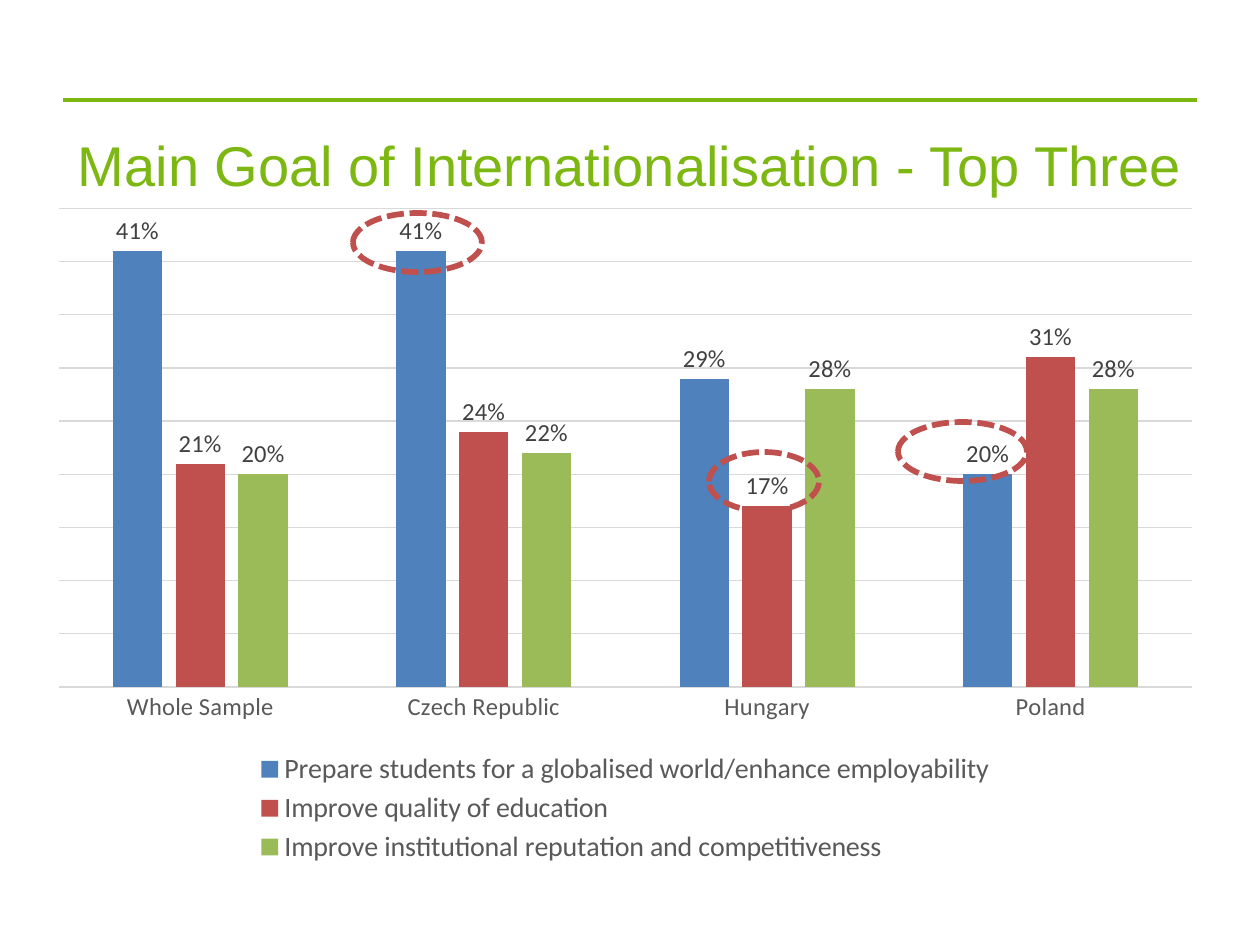
from lxml import etree
from pptx import Presentation
from pptx.chart.data import CategoryChartData
from pptx.dml.color import RGBColor
from pptx.enum.chart import XL_CHART_TYPE as ChartType, XL_LABEL_POSITION as LabelPos
from pptx.enum.chart import XL_LEGEND_POSITION as LegendPos, XL_TICK_MARK as Tick
from pptx.enum.dml import MSO_LINE_DASH_STYLE as Dash
from pptx.enum.shapes import MSO_CONNECTOR as Connector, MSO_SHAPE as Shape
from pptx.enum.text import MSO_ANCHOR as Anchor, MSO_AUTO_SIZE as AutoSize, PP_ALIGN as Align
from pptx.oxml import parse_xml
from pptx.oxml.ns import nsdecls, qn
from pptx.util import Pt

EMU_PER_PX = 914400 / 126
REGIONS = ["Whole Sample", "Czech Republic", "Hungary", "Poland"]
GOALS = [
    ("Prepare students for a globalised world/enhance employability",
     (0.41, 0.41, 0.29, 0.20), "4F81BD"),
    ("Improve quality of education", (0.21, 0.24, 0.17, 0.31), "C0504D"),
    ("Improve institutional reputation and competitiveness",
     (0.20, 0.22, 0.28, 0.28), "9BBB59"),
]
# Left, top and width inside the chart box
HIGHLIGHTS = [(318, 18, 129), (674, 257, 110), (863, 227, 129)]
HIGHLIGHT_HEIGHT = 59


def px(length):
    return round(length * EMU_PER_PX)


def rgb(color):
    return RGBColor.from_string(color)


def style_font(font, size, color, name="Calibri"):
    font.size = Pt(size)
    font.name = name
    font.color.rgb = rgb(color)


def style_line(line, color, width):
    line.color.rgb = rgb(color)
    line.width = Pt(width)


def set_layout(parent, index, x, y, w, h, inner=False):
    """Fix a chart part at fractions of the chart area."""
    for old in parent.findall(qn("c:layout")):
        parent.remove(old)
    layout = parse_xml(f"<c:layout {nsdecls('c')}><c:manualLayout/></c:layout>")
    settings = [("layoutTarget", "inner")] if inner else []
    settings += [("xMode", "edge"), ("yMode", "edge"),
                 ("x", x), ("y", y), ("w", w), ("h", h)]
    for tag, value in settings:
        etree.SubElement(layout[0], qn(f"c:{tag}")).set("val", str(value))
    parent.insert(index, layout)


def add_heading(slide, left, top, width, height):
    # Rule above the title
    rule = slide.shapes.add_connector(
        Connector.STRAIGHT, px(left), px(top), px(left + width), px(top))
    style_line(rule.line, "7EB711", 2.75)
    etree.SubElement(rule._element.spPr, qn("a:effectLst"))

    # Title
    title = slide.shapes.title
    title.left, title.top = px(left), px(top + 16)
    title.width, title.height = px(width), px(height - 16)
    frame = title.text_frame
    frame.text = "Main Goal of Internationalisation - Top Three"
    frame.auto_size = AutoSize.NONE
    frame.vertical_anchor = Anchor.MIDDLE
    frame.paragraphs[0].alignment = Align.CENTER
    style_font(frame.paragraphs[0].runs[0].font, 32, "7DB712", "Arial")


def add_goal_chart(slide, left, top, width, height):
    goal_data = CategoryChartData(number_format="0%")
    goal_data.categories = REGIONS
    for goal, shares, _ in GOALS:
        goal_data.add_series(goal, shares)
    chart = slide.shapes.add_chart(
        ChartType.COLUMN_CLUSTERED, px(left), px(top), px(width), px(height),
        goal_data).chart
    chart.has_title = False
    style_font(chart.font, 10, "000000")

    # Columns and their labels
    plot = chart.plots[0]
    plot.gap_width, plot.overlap = 219, -27
    plot.vary_by_categories = False
    for series, (_, _, color) in zip(plot.series, GOALS):
        series.format.fill.solid()
        series.format.fill.fore_color.rgb = rgb(color)
        labels = series.data_labels
        labels.show_value = True
        labels.number_format, labels.number_format_is_linked = "0%", False
        labels.position = LabelPos.OUTSIDE_END
        style_font(labels.font, 14, "404040")

    # Axes
    regions = chart.category_axis
    regions.major_tick_mark = regions.minor_tick_mark = Tick.NONE
    style_font(regions.tick_labels.font, 14, "595959")
    style_line(regions.format.line, "D9D9D9", 0.75)
    shares = chart.value_axis
    shares.visible = False
    shares.minimum_scale, shares.maximum_scale = 0, 0.45
    shares.major_unit = 0.05
    shares.has_major_gridlines = True
    style_line(shares.major_gridlines.format.line, "D9D9D9", 0.75)
    set_layout(chart._chartSpace.chart.plotArea, 0, 0.02, 0.02, 0.96, 0.71, inner=True)

    # Legend
    chart.has_legend = True
    legend = chart.legend
    legend.position = LegendPos.BOTTOM
    legend.include_in_layout = False
    style_font(legend.font, 16, "595959")
    set_layout(legend._element, 1, 0.19, 0.82, 0.62, 0.18)


def add_highlights(slide, left, top):
    for x, y, width in HIGHLIGHTS:
        ring = slide.shapes.add_shape(
            Shape.OVAL, px(left + x), px(top + y), px(width), px(HIGHLIGHT_HEIGHT))
        ring.shadow.inherit = False
        ring.fill.background()
        style_line(ring.line, "C0504D", 3.25)
        ring.line.dash_style = Dash.SQUARE_DOT


def main():
    deck = Presentation()
    deck.slide_width, deck.slide_height = px(1260), px(945)
    slide = deck.slides.add_slide(deck.slide_layouts[5])
    add_heading(slide, 63, 100, 1134, 113)
    chart_left, chart_top = 35, 195
    add_goal_chart(slide, chart_left, chart_top, 1181, 674)
    add_highlights(slide, chart_left, chart_top)
    deck.save("out.pptx")


if __name__ == "__main__":
    main()
